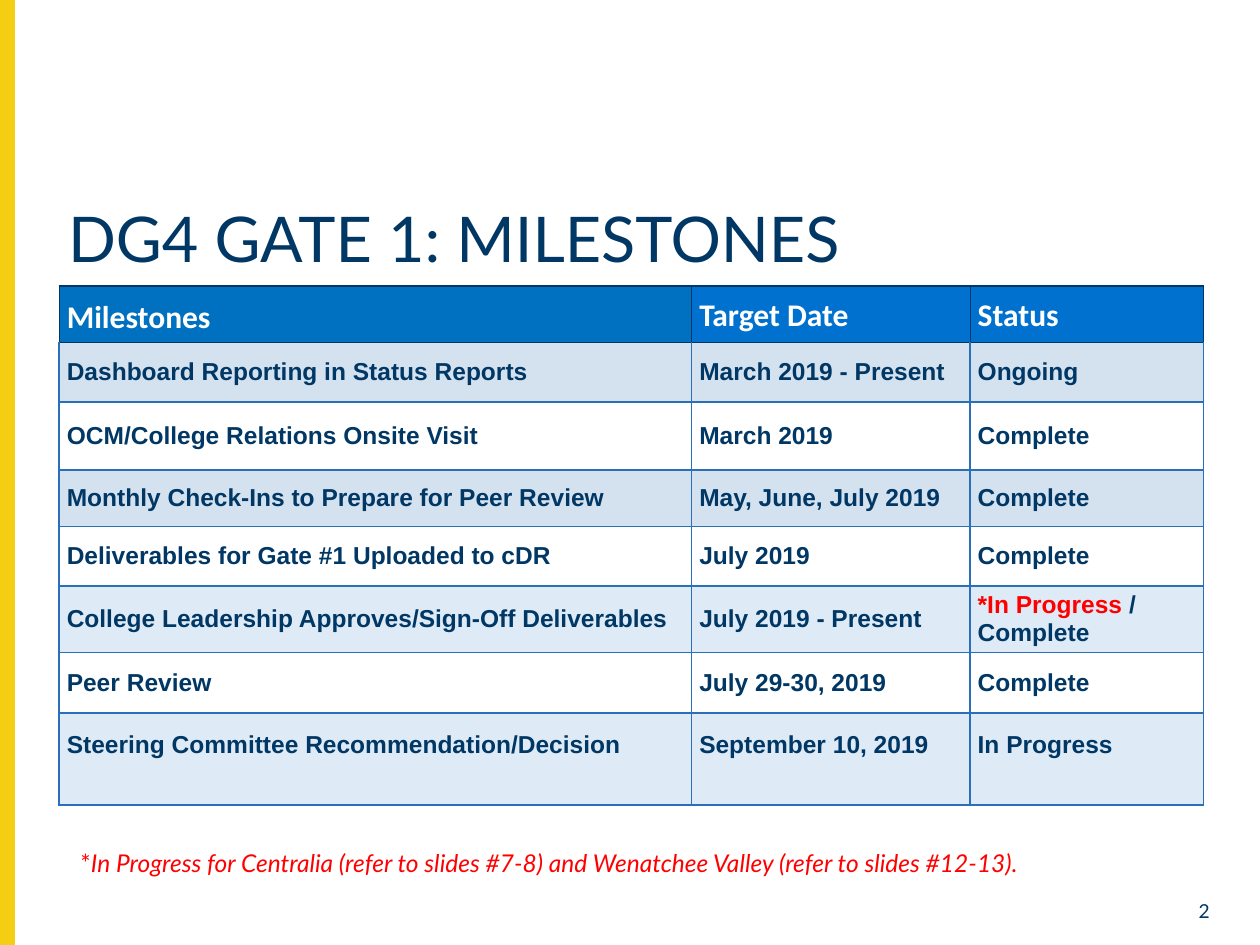
from pptx import Presentation
from pptx.dml.color import RGBColor
from pptx.enum.shapes import MSO_SHAPE
from pptx.enum.text import MSO_ANCHOR, PP_ALIGN
from pptx.oxml.ns import qn
from pptx.util import Inches, Pt
from lxml.etree import SubElement

NAVY = RGBColor(0x00, 0x37, 0x64)
BLUE = RGBColor(0x2A, 0x70, 0xB8)
HEADER_BLUE = RGBColor(0x00, 0x70, 0xC0)
HEADER_BRIGHT = RGBColor(0x00, 0x71, 0xCE)
PALE_BLUE = RGBColor(0xDE, 0xEB, 0xF7)
YELLOW = RGBColor(0xF4, 0xCE, 0x12)
RED = RGBColor(0xFF, 0x00, 0x00)
WHITE = RGBColor(0xFF, 0xFF, 0xFF)

COLUMNS, ROWS = 100, 75
HEADINGS = ["Milestones", "Target Date", "Status"]
MILESTONES = [
    ("Dashboard Reporting in Status Reports", "March 2019 - Present", "Ongoing"),
    ("OCM/College Relations Onsite Visit", "March 2019", "Complete"),
    ("Monthly Check-Ins to Prepare for Peer Review", "May, June, July 2019", "Complete"),
    ("Deliverables for Gate #1 Uploaded to cDR", "July 2019", "Complete"),
    ("College Leadership Approves/Sign-Off Deliverables", "July 2019 - Present",
     [("*In Progress ", RED), ("/ Complete", NAVY)]),
    ("Peer Review", "July 29-30, 2019", "Complete"),
    ("Steering Committee Recommendation/Decision", "September 10, 2019", "In Progress"),
]
# Fill colour and opacity in percent of each milestone row
BANDS = [(BLUE, 20), None, (BLUE, 20), None, (PALE_BLUE, 100), None, (PALE_BLUE, 100)]
COLUMN_WIDTHS = [50.2, 22.1, 18.5]
ROW_HEIGHTS = [4.5, 4.7, 5.4, 4.5, 4.7, 5.3, 4.8, 7.3]


class MilestoneDeck:
    """Style and current slide; lengths are grid columns and rows."""

    def __init__(self):
        self.deck = Presentation()
        self.deck.slide_width, self.deck.slide_height = Inches(10), Inches(7.5)
        self.slide = self.deck.slides.add_slide(self.deck.slide_layouts[5])

    def across(self, columns):
        return round(self.deck.slide_width * columns / COLUMNS)

    def down(self, rows):
        return round(self.deck.slide_height * rows / ROWS)

    def area(self, left, top, width, height):
        return self.across(left), self.down(top), self.across(width), self.down(height)

    def style(self, run, size, color, font="Lato", bold=False, italic=False):
        run.font.size, run.font.name = Pt(size), font
        run.font.bold, run.font.italic = bold, italic
        run.font.color.rgb = color

    def bar(self, area, color):
        stripe = self.slide.shapes.add_shape(MSO_SHAPE.RECTANGLE, *self.area(*area))
        stripe.shadow.inherit = False
        stripe.fill.solid()
        stripe.fill.fore_color.rgb = color
        stripe.line.color.rgb = color
        stripe.line.width = Pt(1)

    def title(self, area, wording):
        heading = self.slide.shapes.title
        heading.left, heading.top, heading.width, heading.height = self.area(*area)
        frame = heading.text_frame
        frame.text = wording
        frame.vertical_anchor = MSO_ANCHOR.MIDDLE
        line = frame.paragraphs[0]
        line.alignment, line.line_spacing = PP_ALIGN.LEFT, 0.9
        self.style(line.runs[0], 36, NAVY)

    def text(self, area, pieces, size, color, align=PP_ALIGN.LEFT):
        frame = self.slide.shapes.add_textbox(*self.area(*area)).text_frame
        frame.word_wrap = True
        line = frame.paragraphs[0]
        line.alignment = align
        for wording, italic in pieces:
            run = line.add_run()
            run.text = wording
            self.style(run, size, color, italic=italic)

    def table(self, left, top, widths, heights):
        area = self.area(left, top, sum(widths), sum(heights))
        grid = self.slide.shapes.add_table(len(heights), len(widths), *area).table
        grid.horz_banding = False
        for column, width in zip(grid.columns, widths):
            column.width = self.across(width)
        for row, height in zip(grid.rows, heights):
            row.height = self.down(height)
        return grid

    def cell(self, cell, content, size, color, font, spacing=1.0, bottom=0):
        cell.vertical_anchor = MSO_ANCHOR.MIDDLE
        cell.margin_left = cell.margin_right = self.across(0.6)
        cell.margin_top, cell.margin_bottom = 0, self.down(bottom)
        line = cell.text_frame.paragraphs[0]
        line.line_spacing = spacing
        pieces = [(content, color)] if isinstance(content, str) else content
        for wording, piece_color in pieces:
            run = line.add_run()
            run.text = wording
            self.style(run, size, piece_color, font, bold=True)

    def fill(self, cell, band):
        if band is None:
            cell.fill.background()
            return
        color, opacity = band
        cell.fill.solid()
        cell.fill.fore_color.rgb = color
        if opacity < 100:
            tint = cell._tc.tcPr.find(f"{qn('a:solidFill')}/{qn('a:srgbClr')}")
            SubElement(tint, qn("a:alpha"), val=str(opacity * 1000))

    def borders(self, cell, edges):
        properties = cell._tc.get_or_add_tcPr()
        for place, (side, (color, width)) in enumerate(zip("LRTB", edges)):
            edge = SubElement(properties, qn(f"a:ln{side}"), w=str(Pt(width)))
            paint = SubElement(edge, qn("a:solidFill"))
            SubElement(paint, qn("a:srgbClr"), val=str(color))
            properties.insert(place, edge)


def main():
    page = MilestoneDeck()

    # Side stripe and title
    page.bar((0, 0, 1.1, ROWS), YELLOW)
    page.title((4.4, 15.8, 91.2, 6.9), "DG4 GATE 1: MILESTONES")

    # Table header
    milestones = page.table(4.7, 22.7, COLUMN_WIDTHS, ROW_HEIGHTS)
    header_edge, body_edge = (NAVY, 0.75), (BLUE, 1)
    for column, heading in enumerate(HEADINGS):
        cell = milestones.cell(0, column)
        page.cell(cell, heading, 18, WHITE, "Calibri", 1.07 if column else 1.15)
        page.fill(cell, (HEADER_BRIGHT if column else HEADER_BLUE, 100))
        page.borders(cell, [header_edge] * 4)

    # Milestone rows; the tall last row holds its text a little higher
    for row, (entry, band) in enumerate(zip(MILESTONES, BANDS), start=1):
        top_edge = header_edge if row == 1 else body_edge
        bottom = 2.2 if row == len(MILESTONES) else 0
        for column, content in enumerate(entry):
            cell = milestones.cell(row, column)
            page.cell(cell, content, 14, NAVY, "Arial", bottom=bottom)
            page.fill(cell, band)
            page.borders(cell, [body_edge, body_edge, top_edge, body_edge])

    # Footnote and page number
    footnote = ("In Progress for Centralia (refer to slides #7-8) "
                "and Wenatchee Valley (refer to slides #12-13).")
    page.text((5.4, 66.8, 89.5, 3.4), [("*", False), (footnote, True)], 14, RED)
    page.text((91.9, 70.9, 5.1, 2.6), [("2", False)], 11, NAVY, PP_ALIGN.RIGHT)

    page.deck.save("out.pptx")


if __name__ == "__main__":
    main()
